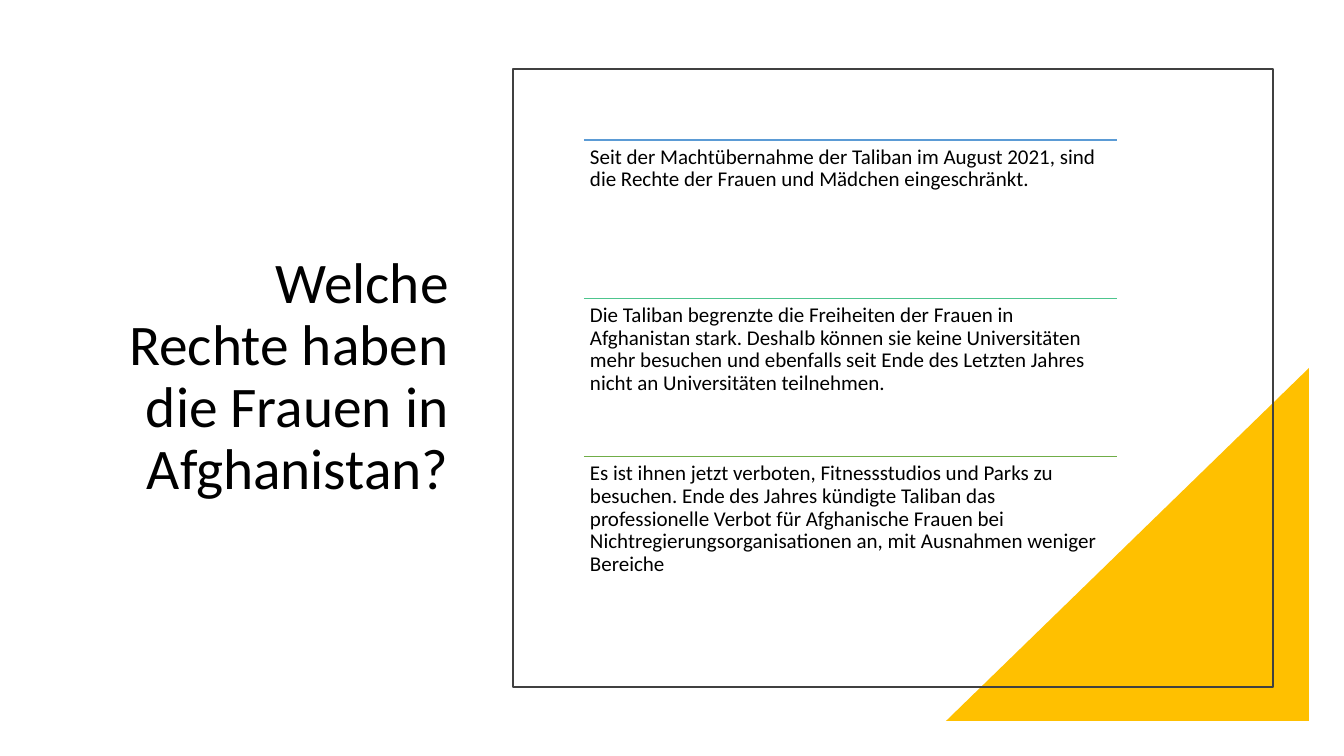
from lxml import etree
from pptx import Presentation
from pptx.dml.color import RGBColor
from pptx.enum.shapes import MSO_CONNECTOR, MSO_SHAPE
from pptx.enum.text import MSO_ANCHOR, MSO_AUTO_SIZE, PP_ALIGN
from pptx.oxml.ns import qn
from pptx.util import Emu, Pt

STRAIGHT = MSO_CONNECTOR.STRAIGHT
RECTANGLE = MSO_SHAPE.RECTANGLE
RIGHT_TRIANGLE = MSO_SHAPE.RIGHT_TRIANGLE
MIDDLE, TOP = MSO_ANCHOR.MIDDLE, MSO_ANCHOR.TOP
LEFT, RIGHT = PP_ALIGN.LEFT, PP_ALIGN.RIGHT
NO_AUTOSIZE = MSO_AUTO_SIZE.NONE

BLACK = RGBColor(0x00, 0x00, 0x00)
GREY = RGBColor(0x40, 0x40, 0x40)
GOLD = RGBColor(0xFF, 0xC0, 0x00)
BLUE = RGBColor(0x5B, 0x9B, 0xD5)
TEAL = RGBColor(0x4D, 0xC5, 0x8D)
GREEN = RGBColor(0x70, 0xAD, 0x47)

FONT = "Calibri"
SLIDE_SIZE = (1344, 756)
TITLE_BOX = (111, 131, 348, 494)
TRIANGLE_BOX = (946, 368, 363, 353)
FRAME_BOX = (513, 69, 760, 618)
LIST_BOX = (584, 140, 533, 475)
TEXT_INSET = 6

TITLE = "Welche Rechte haben die Frauen in Afghanistan?"
STATEMENTS = [
    (BLUE, "Seit der Machtübernahme der Taliban im August 2021, sind die Rechte "
           "der Frauen und Mädchen eingeschränkt."),
    (TEAL, "Die Taliban begrenzte die Freiheiten der Frauen in Afghanistan stark. "
           "Deshalb können sie keine Universitäten mehr besuchen und ebenfalls seit "
           "Ende des Letzten Jahres nicht an Universitäten teilnehmen."),
    (GREEN, "Es ist ihnen jetzt verboten, Fitnessstudios und Parks zu besuchen. "
            "Ende des Jahres kündigte Taliban das professionelle Verbot für "
            "Afghanische Frauen bei Nichtregierungsorganisationen an, "
            "mit Ausnahmen weniger Bereiche"),
]


def px(length):
    """Turn pixels into EMU at 100.8 pixels to the inch."""
    return Emu(round(length * 914400 / 100.8))


def scaled(box):
    """Turn every length of a box into EMU."""
    return [px(length) for length in box]


def write_text(shape, text, size, align, anchor):
    """Fill a shape with one wrapped paragraph."""
    frame = shape.text_frame
    frame.text = text
    frame.word_wrap = True
    frame.auto_size = NO_AUTOSIZE
    frame.vertical_anchor = anchor
    para = frame.paragraphs[0]
    para.alignment = align
    para.line_spacing = 0.9
    para.font.name = FONT
    para.font.size = Pt(size)
    para.font.color.rgb = BLACK


def place_title(page, box):
    """Move the title placeholder into the box and write the question."""
    title = page.shapes.title
    title.left, title.top, title.width, title.height = scaled(box)
    write_text(title, TITLE, 41, RIGHT, MIDDLE)


def add_corner(page, box):
    """Draw the gold triangle with its right angle at the bottom right."""
    triangle = page.shapes.add_shape(RIGHT_TRIANGLE, *scaled(box))
    triangle.shadow.inherit = False
    triangle.fill.solid()
    triangle.fill.fore_color.rgb = GOLD
    triangle.line.fill.background()
    triangle.element.spPr.get_or_add_xfrm().set("flipH", "1")


def add_frame(page, box):
    """Draw the unfilled frame around the statements."""
    frame = page.shapes.add_shape(RECTANGLE, *scaled(box))
    frame.shadow.inherit = False
    frame.fill.background()
    frame.line.color.rgb = GREY
    frame.line.width = Pt(1.5)


def add_statement(shapes, box, color, text):
    """Draw a coloured rule with its statement below."""
    left, top, width, height = box
    rule = shapes.add_connector(
        STRAIGHT, *scaled((left, top, left + width, top)))
    rule.line.color.rgb = color
    rule.line.width = Pt(1)
    etree.SubElement(rule.element.spPr, qn("a:effectLst"))

    statement = shapes.add_textbox(*scaled(box))
    frame = statement.text_frame
    frame.margin_left = frame.margin_right = px(TEXT_INSET)
    frame.margin_top = frame.margin_bottom = px(TEXT_INSET)
    write_text(statement, text, 15, LEFT, TOP)


def add_statements(page, box):
    """Stack the statements in equal rows as one group."""
    left, top, width, height = box
    row_height = height / len(STATEMENTS)
    group = page.shapes.add_group_shape()
    for index, (color, text) in enumerate(STATEMENTS):
        row = (left, top + index * row_height, width, row_height)
        add_statement(group.shapes, row, color, text)


def main():
    """Build the slide and save the deck."""
    deck = Presentation()
    deck.slide_width, deck.slide_height = scaled(SLIDE_SIZE)
    page = deck.slides.add_slide(deck.slide_layouts.get_by_name("Title Only"))
    place_title(page, TITLE_BOX)
    add_corner(page, TRIANGLE_BOX)
    add_frame(page, FRAME_BOX)
    add_statements(page, LIST_BOX)
    deck.save("out.pptx")


if __name__ == "__main__":
    main()
